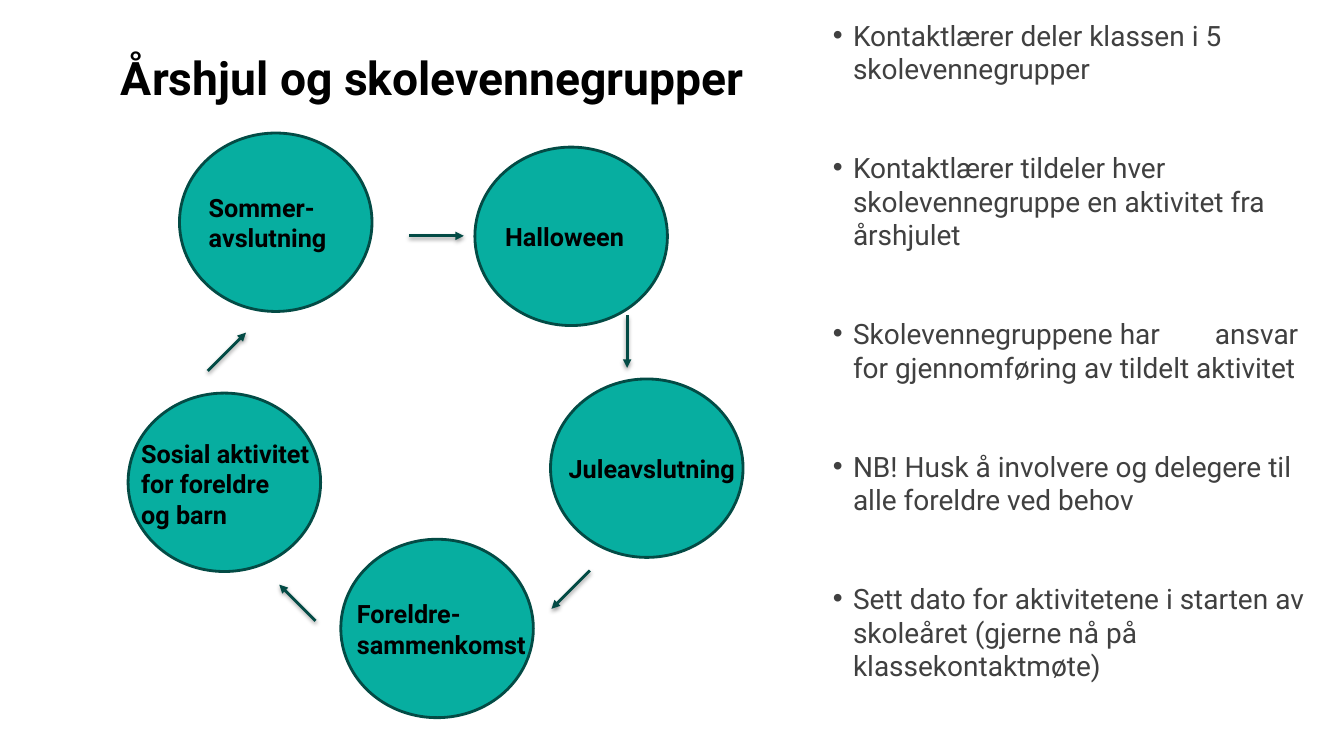
from lxml import etree
from pptx import Presentation
from pptx.dml.color import RGBColor
from pptx.enum.shapes import MSO_CONNECTOR, MSO_SHAPE
from pptx.enum.text import MSO_ANCHOR, MSO_AUTO_SIZE, PP_ALIGN
from pptx.oxml import parse_xml
from pptx.util import Inches, Pt

OVAL = MSO_SHAPE.OVAL
STRAIGHT = MSO_CONNECTOR.STRAIGHT
TOP = MSO_ANCHOR.TOP
LEFT = PP_ALIGN.LEFT
NO_FIT = MSO_AUTO_SIZE.NONE
NAMESPACE = "http://schemas.openxmlformats.org/drawingml/2006/main"
TEAL, DARK_TEAL, BLACK, GREY = "07AEA0", "034B45", "000000", "404040"
SHADOW = (f'<a:effectLst xmlns:a="{NAMESPACE}">'
          '<a:outerShdw blurRad="38100" dist="20320" dir="5400000" rotWithShape="0">'
          '<a:srgbClr val="000000"><a:alpha val="38000"/></a:srgbClr>'
          '</a:outerShdw></a:effectLst>')


def color(value):
    return RGBColor.from_string(value)


def write(shape, lines, size, text_color, bold=False, wrap=True):
    frame = shape.text_frame
    settings = {"word_wrap": wrap, "auto_size": NO_FIT, "vertical_anchor": TOP}
    for side in ("left", "right", "top", "bottom"):
        settings[f"margin_{side}"] = Inches(0.05)
    for name, value in settings.items():
        setattr(frame, name, value)
    frame.text = "\n".join(lines)
    for paragraph in frame.paragraphs:
        paragraph.alignment = LEFT
        for run in paragraph.runs:
            for name, value in {"name": "Roboto", "size": Pt(size), "bold": bold}.items():
                setattr(run.font, name, value)
            run.font.color.rgb = color(text_color)
    return frame.paragraphs


presentation = Presentation()
presentation.slide_width = Inches(13.33)
presentation.slide_height = Inches(7.5)
slide = presentation.slides.add_slide(presentation.slide_layouts[5])
shapes = slide.shapes

# Title
title = shapes.title
for name, value in {"left": 1.15, "top": 0.44, "width": 8.63, "height": 0.63}.items():
    setattr(title, name, Inches(value))
write(title, ["Årshjul og skolevennegrupper"], 33, BLACK, bold=True)

# Year wheel: circle position, label position and width, label lines
activities = [
    (1.78, 1.32, 2.02, 1.86, 1.38, ["Sommer-", "avslutning"]),
    (4.71, 1.46, 4.96, 2.15, 1.41, ["Halloween"]),
    (5.46, 3.76, 5.59, 4.45, 1.88, ["Juleavslutning"]),
    (3.38, 5.35, 3.49, 5.89, 1.82, ["Foreldre-", "sammenkomst"]),
    (1.27, 3.9, 1.35, 4.3, 2, ["Sosial aktivitet", "for foreldre", "og barn"]),
]
for left, top, label_left, label_top, label_width, lines in activities:
    circle = shapes.add_shape(OVAL, Inches(left), Inches(top), Inches(1.91), Inches(1.77))
    circle.shadow.inherit = False
    circle.fill.solid()
    circle.fill.fore_color.rgb = color(TEAL)
    circle.line.color.rgb = color(DARK_TEAL)
    circle.line.width = Pt(2)
    label = shapes.add_textbox(Inches(label_left), Inches(label_top), Inches(label_width),
                               Inches(0.09 + 0.3 * len(lines)))
    write(label, lines, 18, BLACK, bold=True, wrap=False)

# Arrows, clockwise
arrows = [
    (4.06, 2.34, 4.6, 2.34),
    (6.22, 3.13, 6.22, 3.65),
    (5.85, 5.66, 5.47, 6.04),
    (3.13, 6.16, 2.77, 5.8),
    (2.06, 3.68, 2.44, 3.3),
]
for points in arrows:
    arrow = shapes.add_connector(STRAIGHT, *[Inches(point) for point in points])
    arrow.line.color.rgb = color(DARK_TEAL)
    arrow.line.width = Pt(2)
    etree.SubElement(arrow.line._get_or_add_ln(), f"{{{NAMESPACE}}}tailEnd", type="triangle")
    arrow._element.spPr.append(parse_xml(SHADOW))

# Bulleted instructions
instructions = [
    "Kontaktlærer deler klassen i 5 skolevennegrupper",
    "Kontaktlærer tildeler hver skolevennegruppe en aktivitet fra årshjulet",
    "Skolevennegruppene har\tansvar for gjennomføring av tildelt aktivitet",
    "NB! Husk å involvere og delegere til alle foreldre ved behov",
    "Sett dato for aktivitetene i starten av skoleåret (gjerne nå på klassekontaktmøte)",
]
panel = shapes.add_textbox(Inches(7.99), Inches(0.13), Inches(5.02), Inches(7.06))
for index, paragraph in enumerate(write(panel, instructions, 20, GREY)):
    paragraph.space_before = Pt(46.6 if index else 0)
    properties = paragraph._p.get_or_add_pPr()
    properties.set("marL", str(Inches(0.42)))
    properties.set("indent", str(Inches(-0.2)))
    etree.SubElement(properties, f"{{{NAMESPACE}}}buFont", typeface="Arial")
    etree.SubElement(properties, f"{{{NAMESPACE}}}buChar", char="•")
    if "\t" in paragraph.text:
        tab_list = etree.SubElement(properties, f"{{{NAMESPACE}}}tabLst")
        etree.SubElement(tab_list, f"{{{NAMESPACE}}}tab", pos=str(Inches(4.01)), algn="l")

presentation.save("out.pptx")
